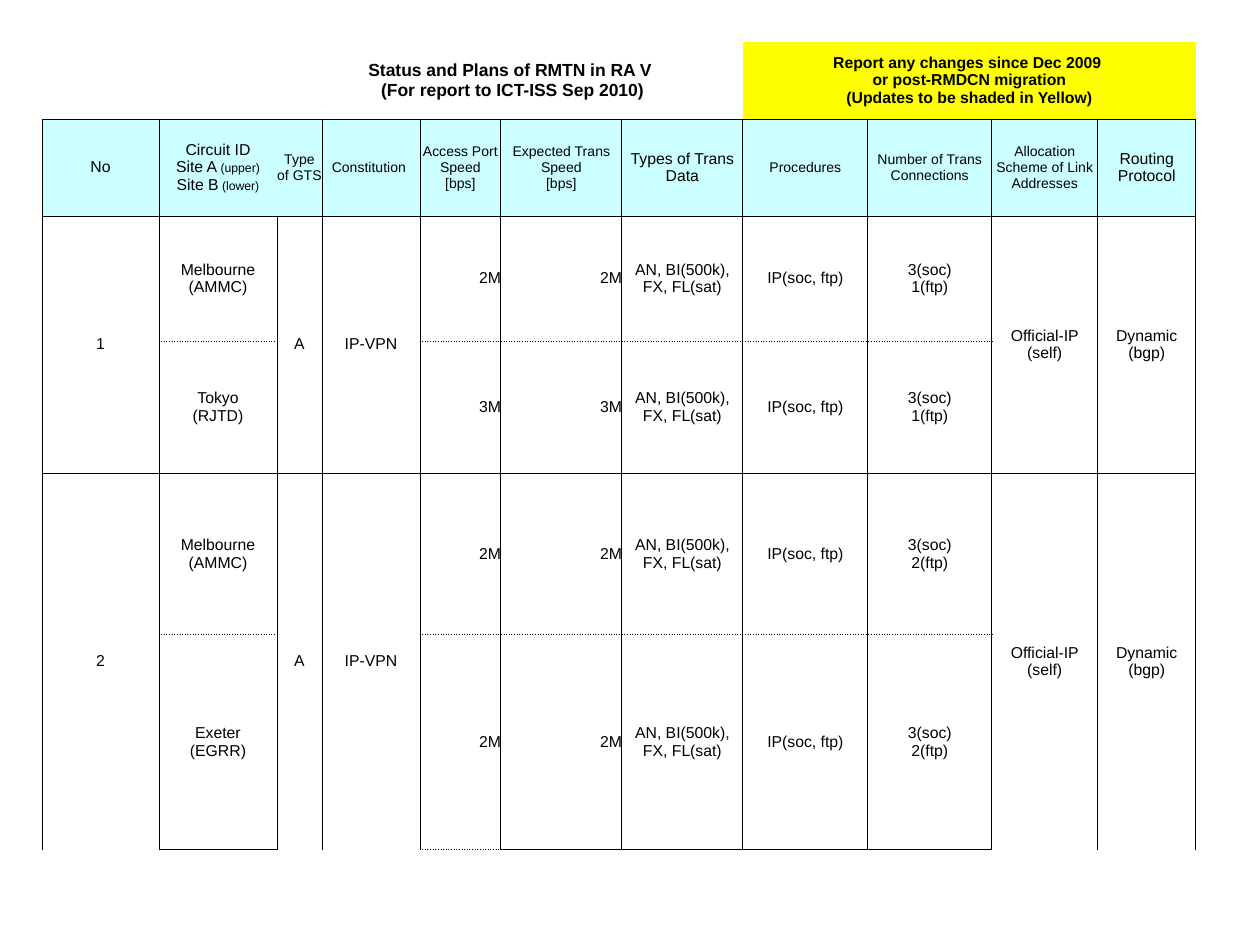
from lxml import etree
from pptx import Presentation
from pptx.dml.color import RGBColor
from pptx.enum.text import MSO_ANCHOR, PP_ALIGN
from pptx.oxml.ns import qn
from pptx.util import Pt

PX = 914400 // 126
CENTER, RIGHT = PP_ALIGN.CENTER, PP_ALIGN.RIGHT
MIDDLE = MSO_ANCHOR.MIDDLE

BLACK, YELLOW, HEADER_FILL = "000000", "FFFF00", "CCFFFF"
FONT = "Arial"
SOLID, DOT = "solid", "dot"
SIDES = {"left": "a:lnL", "right": "a:lnR", "top": "a:lnT", "bottom": "a:lnB"}

COLUMN_WIDTHS = [117, 118, 45, 98, 81, 121, 121, 125, 124, 106, 98]
ROW_HEIGHTS = [77, 97, 125, 132, 162, 215]
SITE_COLUMNS = (1, 4, 5, 6, 7, 8)  # one value for each site of a circuit
SPEED_COLUMNS = (4, 5)

TITLE = "Status and Plans of RMTN in RA V\n (For report to ICT-ISS Sep 2010)"
NOTICE = ("Report any changes since Dec 2009 \nor post-RMDCN migration\n"
          "(Updates to be shaded in Yellow)")

# Each heading is a list of (text, size) runs
HEADINGS = [
    [("No", 9)],
    [("Circuit ID\nSite A", 9), (" (upper)\n", 7), ("Site B", 9), (" (lower)", 7)],
    [("Type of GTS", 8)],
    [("Constitution ", 8)],
    [("Access Port Speed\n[bps]", 8)],
    [("Expected Trans Speed\n[bps]", 8)],
    [("Types of Trans Data", 9)],
    [("Procedures", 8)],
    [("Number of Trans Connections", 8)],
    [("Allocation Scheme of Link Addresses", 8)],
    [("Routing Protocol", 9)],
]

# Circuit: number and its two sites as (site, speed, connections)
CIRCUITS = [
    ("1", [("Melbourne\n(AMMC)", "2M", "3(soc)\n1(ftp)"),
           ("Tokyo\n(RJTD)", "3M", "3(soc)\n1(ftp)")]),
    ("2", [("Melbourne\n(AMMC)", "2M", "3(soc)\n2(ftp)"),
           ("Exeter\n(EGRR)", "2M", "3(soc)\n2(ftp)")]),
]


def color(value):
    return RGBColor.from_string(value)


def write_cell(cell, runs, bold=False, align=CENTER):
    paragraph = cell.text_frame.paragraphs[0]
    paragraph.alignment = align
    font = paragraph.font
    font.name, font.size, font.bold = FONT, Pt(runs[0][1]), bold
    font.color.rgb = color(BLACK)
    for text, size in runs:
        for index, line in enumerate(text.split("\n")):
            if index:
                paragraph.add_line_break()
            if line:
                run = paragraph.add_run()
                run.text = line
                if size != runs[0][1]:
                    run.font.size = Pt(size)


def set_borders(cell, styles):
    properties = cell._tc.get_or_add_tcPr()
    for index, (side, tag) in enumerate(SIDES.items()):
        line = etree.Element(qn(tag), w=str(Pt(0.5)))
        if styles[side]:
            fill = etree.SubElement(line, qn("a:solidFill"))
            etree.SubElement(fill, qn("a:srgbClr"), val=BLACK)
            etree.SubElement(line, qn("a:prstDash"), val=styles[side])
        else:
            etree.SubElement(line, qn("a:noFill"))
        properties.insert(index, line)


def border_styles(row, column):
    if row == 0:
        return dict.fromkeys(SIDES, None) | {"bottom": SOLID}
    styles = dict.fromkeys(SIDES, SOLID)
    if row == 1:
        # Circuit ID and type share one heading box
        if column in (1, 2):
            styles["right" if column == 1 else "left"] = None
    else:
        middle_side = "bottom" if row % 2 == 0 else "top"
        styles[middle_side] = DOT if column in SITE_COLUMNS else None
        if (row, column) == (5, 4):
            styles["bottom"] = DOT
    return styles


def fill_title_row(table):
    for first, last, text, size in ((2, 6, TITLE, 10), (7, 10, NOTICE, 9)):
        table.cell(0, first).merge(table.cell(0, last))
        write_cell(table.cell(0, first), [(text, size)], bold=True)


def fill_circuit(table, top, number, sites):
    shared = {0: number, 2: "A", 3: "IP-VPN",
              9: "Official-IP\n(self)", 10: "Dynamic\n(bgp)"}
    for column, text in shared.items():
        table.cell(top, column).merge(table.cell(top + 1, column))
        write_cell(table.cell(top, column), [(text, 9)])
    for row, (site, speed, connections) in enumerate(sites, top):
        values = (site, speed, speed, "AN, BI(500k), FX, FL(sat)",
                  "IP(soc, ftp)", connections)
        for column, text in zip(SITE_COLUMNS, values):
            align = RIGHT if column in SPEED_COLUMNS else CENTER
            write_cell(table.cell(row, column), [(text, 9)], align=align)


def format_cell(cell, row, column):
    cell.margin_left = cell.margin_right = cell.margin_top = cell.margin_bottom = 0
    cell.vertical_anchor = MIDDLE
    fill = HEADER_FILL if row == 1 else YELLOW if row == 0 and column >= 7 else None
    if fill:
        cell.fill.solid()
        cell.fill.fore_color.rgb = color(fill)
    else:
        cell.fill.background()
    set_borders(cell, border_styles(row, column))


def add_status_table(slide, left, top):
    box = [value * PX for value in (left, top, sum(COLUMN_WIDTHS), sum(ROW_HEIGHTS))]
    table = slide.shapes.add_table(len(ROW_HEIGHTS), len(COLUMN_WIDTHS), *box).table
    table.first_row = table.horz_banding = False
    for column, width in zip(table.columns, COLUMN_WIDTHS):
        column.width = width * PX
    for row, height in zip(table.rows, ROW_HEIGHTS):
        row.height = height * PX

    # Fills and borders
    for row in range(len(ROW_HEIGHTS)):
        for column in range(len(COLUMN_WIDTHS)):
            format_cell(table.cell(row, column), row, column)

    # Texts
    fill_title_row(table)
    for column, runs in enumerate(HEADINGS):
        write_cell(table.cell(1, column), runs)
    for index, (number, sites) in enumerate(CIRCUITS):
        fill_circuit(table, 2 + 2 * index, number, sites)


def main():
    presentation = Presentation()
    presentation.slide_width, presentation.slide_height = 1260 * PX, 945 * PX
    slide = presentation.slides.add_slide(presentation.slide_layouts[6])
    add_status_table(slide, 42, 42)
    presentation.save("out.pptx")


if __name__ == "__main__":
    main()
